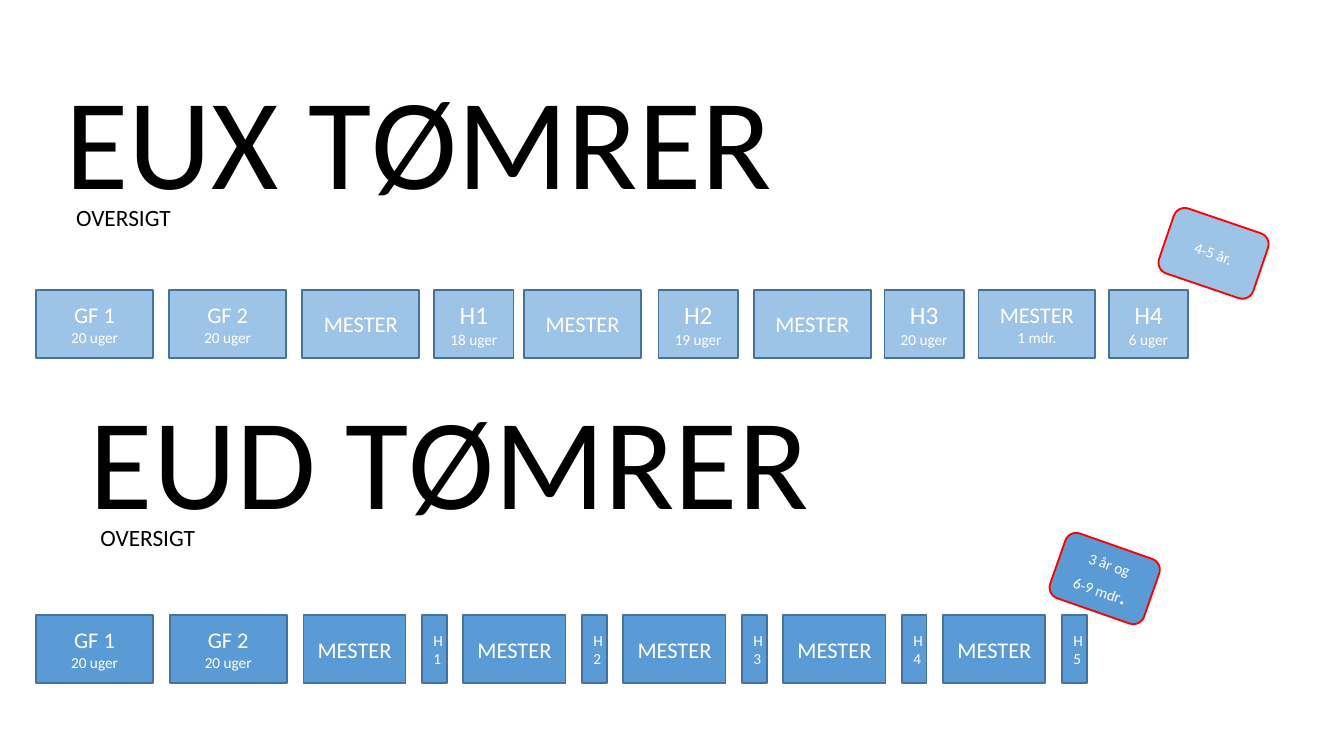
import pptx
import pptx.util
import pptx.dml.color
import pptx.enum.shapes
import pptx.enum.text

Pt = pptx.util.Pt
SHAPES = pptx.enum.shapes.MSO_SHAPE
ALIGN = pptx.enum.text.PP_ALIGN
ANCHOR = pptx.enum.text.MSO_ANCHOR

# Content: each step is (kind, lines)
BASIC_1 = ("basic", ["GF 1", "20 uger"])
BASIC_2 = ("basic", ["GF 2", "20 uger"])
MASTER = ("master", ["MESTER"])

# EUX steps have individual left edges
EUX_STEPS = [
    (19.4, BASIC_1),
    (90.7, BASIC_2),
    (162, MASTER),
    (232.6, ("school", ["H1", "18 uger"])),
    (280.8, MASTER),
    (352.8, ("school", ["H2", "19 uger"])),
    (403.9, MASTER),
    (473.8, ("school", ["H3", "20 uger"])),
    (524.2, ("master", ["MESTER", "1 mdr."])),
    (594, ("school", ["H4", "6 uger"])),
]
EUD_STEPS = [BASIC_1, BASIC_2]
for number in range(1, 6):
    EUD_STEPS += [MASTER, ("school", [f"H{number}"])]

# Geometry and style
STEP_HEIGHT, EUD_LEFT, EUD_GAP = 36.7, 19.4, 9
EUX = {
    "fill": "9DC3E6", "top": 155.2,
    "widths": {"basic": 62.6, "master": 62.6, "school": 42.5},
    "sizes": {"basic": 12, "master": 12, "school": 13.5},
}
EUD = {
    "fill": "5B9BD5", "top": 329.4,
    "widths": {"basic": 62.6, "master": 54.7, "school": 13},
    "sizes": {"basic": 12, "master": 12, "school": 8.2},
}
SMALL = 8.2


def color(value):
    return pptx.dml.color.RGBColor.from_string(value)


def style_runs(paragraph, size, value):
    for run in paragraph.runs:
        run.font.name = "Calibri"
        run.font.size = Pt(size)
        run.font.color.rgb = color(value)


def add_box(slide, kind, box, fill, line, lines, sizes):
    shape = slide.shapes.add_shape(kind, *map(Pt, box))
    shape.shadow.inherit = False
    shape.fill.solid()
    shape.fill.fore_color.rgb = color(fill)
    shape.line.color.rgb = color(line)
    shape.line.width = Pt(1)
    frame = shape.text_frame
    frame.word_wrap = True
    frame.vertical_anchor = ANCHOR.MIDDLE
    frame.text = "\n".join(lines)
    for paragraph, size in zip(frame.paragraphs, sizes):
        paragraph.alignment = ALIGN.CENTER
        style_runs(paragraph, size, "FFFFFF")
    return shape


def add_step(slide, track, left, step):
    kind, lines = step
    box = (left, track["top"], track["widths"][kind], STEP_HEIGHT)
    add_box(slide, SHAPES.RECTANGLE, box, track["fill"], "43739E", lines,
            (track["sizes"][kind], SMALL))


def add_badge(slide, track, left, top, rotation, lines):
    badge = add_box(slide, SHAPES.ROUNDED_RECTANGLE, (left, top, 53.3, 36.7),
                    track["fill"], "FF0000", lines, (SMALL, SMALL))
    badge.rotation = rotation
    return badge


def format_heading(shape, box, text):
    shape.left, shape.top, shape.width, shape.height = map(Pt, box)
    frame = shape.text_frame
    frame.text = text + "\nOVERSIGT"
    frame.word_wrap = True
    frame.auto_size = pptx.enum.text.MSO_AUTO_SIZE.NONE
    frame.vertical_anchor = ANCHOR.MIDDLE
    frame.margin_left = frame.margin_right = Pt(5)
    frame.margin_top = frame.margin_bottom = Pt(2.7)
    for paragraph, size in zip(frame.paragraphs, (69.4, 12.5)):
        paragraph.alignment = ALIGN.LEFT
        paragraph.line_spacing = 0.7
        style_runs(paragraph, size, "000000")
    # Indent the subtitle slightly
    properties = frame.paragraphs[1]._p.get_or_add_pPr()
    properties.set("marL", str(Pt(5.6)))


def main():
    presentation = pptx.Presentation()
    presentation.slide_width, presentation.slide_height = Pt(720), Pt(405)
    slide = presentation.slides.add_slide(presentation.slide_layouts[5])

    # Headings
    format_heading(slide.shapes.title, (30.2, 39.6, 559.4, 99.4), "EUX TØMRER")
    eud_heading = slide.shapes.add_textbox(0, 0, 0, 0)
    format_heading(eud_heading, (43.2, 211, 438.5, 99.4), "EUD TØMRER")

    # EUX track
    for left, step in EUX_STEPS:
        add_step(slide, EUX, left, step)
    add_badge(slide, EUX, 623.5, 117.4, 18.8, ["4-5 år."])

    # EUD track, evenly spaced
    left = EUD_LEFT
    for step in EUD_STEPS:
        add_step(slide, EUD, left, step)
        left += EUD["widths"][step[0]] + EUD_GAP
    badge = add_badge(slide, EUD, 565.2, 291.6, 19.3, ["3 år og", "6-9 mdr"])
    last_line = badge.text_frame.paragraphs[1]
    last_line.add_run().text = "."
    style_runs(last_line, SMALL, "FFFFFF")
    last_line.runs[-1].font.size = Pt(13.5)

    presentation.save("out.pptx")


if __name__ == "__main__":
    main()
